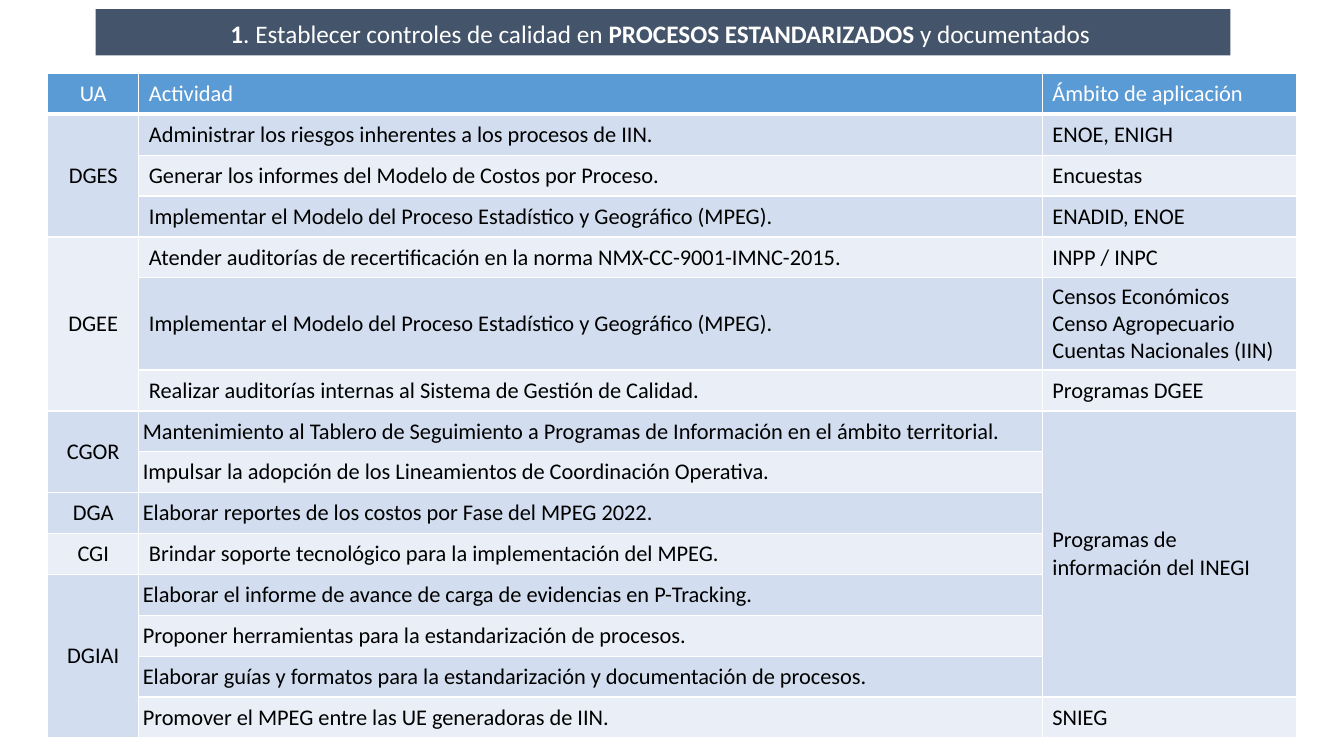
from lxml.etree import SubElement
from pptx import Presentation
from pptx.dml.color import RGBColor
from pptx.enum.shapes import MSO_SHAPE as Shape
from pptx.enum.text import MSO_ANCHOR as Anchor, PP_ALIGN as Align
from pptx.oxml.ns import qn
from pptx.util import Cm, Pt

COLORS = {"banner": "44546A", "header": "5B9BD5", "odd": "D2DEEF",
          "even": "EAEFF7", "white": "FFFFFF", "text": "000000"}
FONT = "Calibri"
ROW_HEIGHT = 1.03
TALL_ROW_HEIGHT = 2.29
COLUMN_WIDTHS = (2.3, 22.77, 6.41)
HEADINGS = ("UA", "Actividad", "Ámbito de aplicación")
TITLE = (("1", True), (". Establecer controles de calidad en ", False),
         ("PROCESOS ESTANDARIZADOS ", True), ("y documentados ", False))

UNITS = (
    ("DGES", ("Administrar los riesgos inherentes a los procesos de IIN.",
              "Generar los informes del Modelo de Costos por Proceso.",
              "Implementar el Modelo del Proceso Estadístico y Geográfico (MPEG).")),
    ("DGEE", ("Atender auditorías de recertificación en la norma NMX-CC-9001-IMNC-2015.",
              "Implementar el Modelo del Proceso Estadístico y Geográfico (MPEG).",
              "Realizar auditorías internas al Sistema de Gestión de Calidad.")),
    ("CGOR", ("Mantenimiento al Tablero de Seguimiento a Programas de Información "
              "en el ámbito territorial.",
              "Impulsar la adopción de los Lineamientos de Coordinación Operativa.")),
    ("DGA", ("Elaborar reportes de los costos por Fase del MPEG 2022.",)),
    ("CGI", ("Brindar soporte tecnológico para la implementación del MPEG.",)),
    ("DGIAI", ("Elaborar el informe de avance de carga de evidencias en P-Tracking.",
               "Proponer herramientas para la estandarización de procesos.",
               "Elaborar guías y formatos para la estandarización y documentación de procesos.",
               "Promover el MPEG entre las UE generadoras de IIN.")),
)
JUSTIFIED_UNITS = ("CGOR", "DGA", "DGIAI")
SCOPES = (
    ("ENOE, ENIGH", 1), ("Encuestas", 1), ("ENADID, ENOE", 1), ("INPP / INPC", 1),
    ("Censos Económicos\nCenso Agropecuario\nCuentas Nacionales (IIN)", 1),
    ("Programas DGEE", 1), ("Programas de información del INEGI", 7), ("SNIEG", 1),
)


def rgb(name):
    """Return the named colour."""
    return RGBColor.from_string(COLORS[name])


def set_font(paragraph, size, color):
    """Apply the slide's font to a paragraph."""
    paragraph.font.name = FONT
    paragraph.font.size = Pt(size)
    paragraph.font.color.rgb = rgb(color)


def add_banner(slide):
    """Draw the title banner."""
    banner = slide.shapes.add_shape(Shape.RECTANGLE, Cm(2.41), Cm(0.23), Cm(28.6), Cm(1.17))
    banner.shadow.inherit = False
    banner.fill.solid()
    banner.fill.fore_color.rgb = rgb("banner")
    banner.line.fill.background()
    banner.text_frame.vertical_anchor = Anchor.MIDDLE
    title = banner.text_frame.paragraphs[0]
    title.alignment = Align.CENTER
    title.line_spacing = 1.07
    title.space_after = Pt(6)
    set_font(title, 18, "white")
    for text, bold in TITLE:
        run = title.add_run()
        run.text = text
        run.font.bold = bold


def add_borders(cell, top, bottom):
    """Give a cell white borders, with top and bottom widths in points."""
    properties = cell._tc.get_or_add_tcPr()
    for side, width in (("L", 1), ("R", 1), ("T", top), ("B", bottom)):
        border = SubElement(properties, qn(f"a:ln{side}"), w=str(Pt(width)))
        fill = SubElement(border, qn("a:solidFill"))
        SubElement(fill, qn("a:srgbClr"), val=COLORS["white"])


def style_cell(cell, row):
    """Set the borders and banded fill of a cell."""
    add_borders(cell, top=3 if row == 1 else 1, bottom=3 if row == 0 else 1)
    band = "odd" if row % 2 else "even"
    cell.fill.solid()
    cell.fill.fore_color.rgb = rgb(band if row else "header")
    cell.vertical_anchor = Anchor.MIDDLE


def write_cell(cell, text, color="text", alignment=Align.LEFT):
    """Write text in a cell, one paragraph per line."""
    cell.text = text
    for paragraph in cell.text_frame.paragraphs:
        paragraph.alignment = alignment
        set_font(paragraph, 16, color)


def write_justified(cell, text):
    """Write justified text with narrow margins."""
    cell.margin_left, cell.margin_right = Cm(0.1), Cm(0.18)
    cell.margin_top = cell.margin_bottom = Cm(0)
    write_cell(cell, text, alignment=Align.JUSTIFY)


def merge_down(table, row, column, count):
    """Merge count cells downwards and return the first one."""
    cell = table.cell(row, column)
    if count > 1:
        cell.merge(table.cell(row + count - 1, column))
    return cell


def add_grid(slide):
    """Add the styled empty table."""
    row_count = 1 + sum(len(activities) for _, activities in UNITS)
    table = slide.shapes.add_table(row_count, len(HEADINGS), Cm(1.2), Cm(1.85),
                                   Cm(sum(COLUMN_WIDTHS)), Cm(ROW_HEIGHT * row_count)).table
    table.first_row = table.horz_banding = False
    for column, width in zip(table.columns, COLUMN_WIDTHS):
        column.width = Cm(width)
    for index, row in enumerate(table.rows):
        row.height = Cm(TALL_ROW_HEIGHT if index == 5 else ROW_HEIGHT)
        for cell in row.cells:
            style_cell(cell, index)
    return table


def fill_table(table):
    """Write the headings, units, activities and scopes."""
    for column, heading in enumerate(HEADINGS):
        write_cell(table.cell(0, column), heading, "white",
                   Align.LEFT if column else Align.CENTER)
    row = 1
    for unit, activities in UNITS:
        write_cell(merge_down(table, row, 0, len(activities)), unit, alignment=Align.CENTER)
        write_activity = write_justified if unit in JUSTIFIED_UNITS else write_cell
        for activity in activities:
            write_activity(table.cell(row, 1), activity)
            row += 1
    row = 1
    for scope, count in SCOPES:
        write_cell(merge_down(table, row, 2, count), scope)
        row += count


def main():
    """Build and save the slide."""
    deck = Presentation()
    deck.slide_width, deck.slide_height = Cm(33.87), Cm(19.05)
    slide = deck.slides.add_slide(deck.slide_layouts[6])
    add_banner(slide)
    fill_table(add_grid(slide))
    deck.save("out.pptx")


if __name__ == "__main__":
    main()
